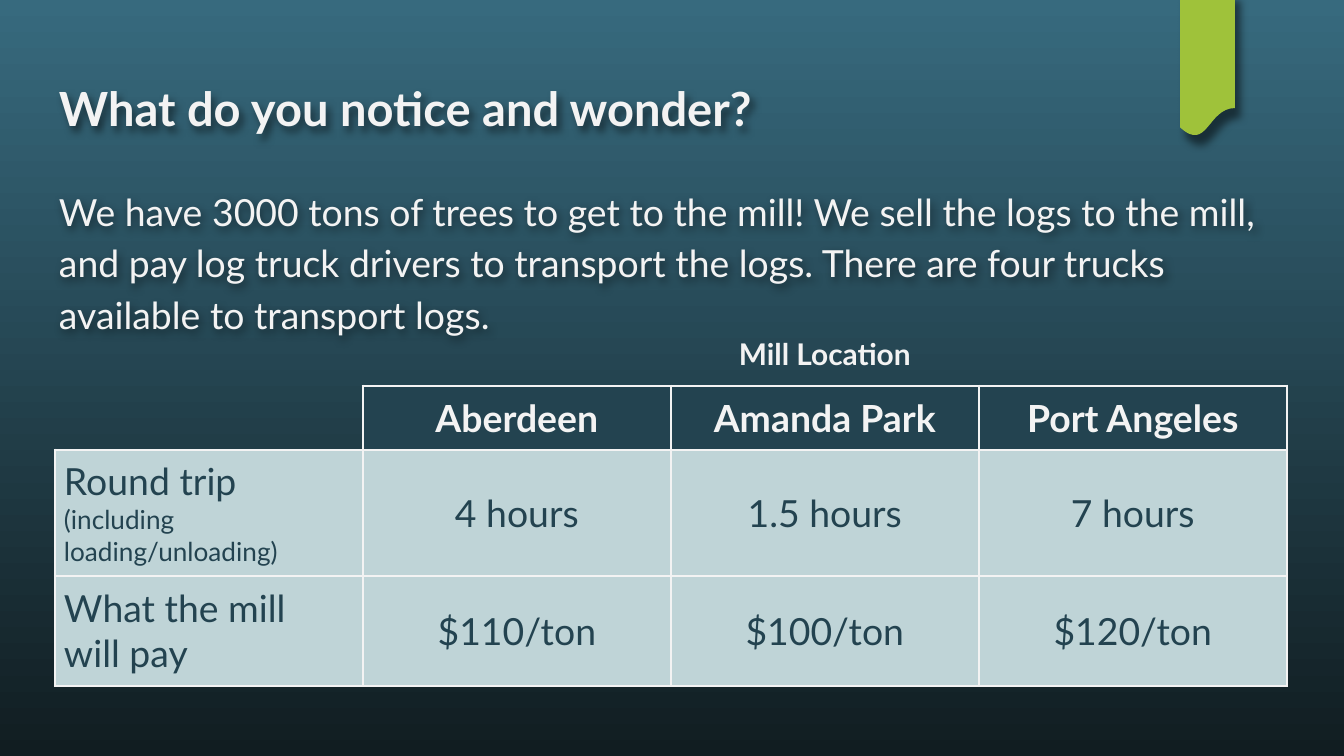
"""Build a slide that sets out a log-hauling problem with a table of mills."""
from lxml import etree
from pptx import Presentation
from pptx import util as u
from pptx.dml.color import RGBColor
from pptx.enum import shapes, text
from pptx.oxml.ns import qn

PX = 914400 / 134.4
FONT = "Lato"
PALE, DARK, MIST, GREEN = "F3F3F3", "234350", "BFD4D7", "9FC23A"
TITLE = "What do you notice and wonder?"
STORY = (
    "We have 3000 tons of trees to get to the mill! We sell the logs to the mill, "
    "and pay log truck drivers to transport the logs. "
    "There are four trucks available to transport logs."
)
MILLS = [
    ["", "Mill Location", "", ""],
    ["", "Aberdeen", "Amanda Park", "Port Angeles"],
    ["Round trip ", "4 hours", "1.5 hours", "7 hours"],
    ["What the mill \vwill pay", "$110/ton", "$100/ton", "$120/ton"],
]
ROW_HEIGHTS = [64, 64, 126, 110]
COLUMN_WIDTH = 308


def px(length):
    """Turn whole pixels into EMU."""
    return u.Emu(round(length * PX))


def colour(code):
    """Turn a hex string into a colour."""
    return RGBColor.from_string(code)


def place(shape, left, top, width, height):
    """Set the position and size of a shape."""
    shape.left, shape.top = px(left), px(top)
    shape.width, shape.height = px(width), px(height)


def style(font, size, code, bold=False):
    """Set the typeface, size, colour and weight of a font."""
    font.name, font.size, font.bold = FONT, u.Pt(size), bold
    font.color.rgb = colour(code)


def add_shadow(shape, distance):
    """Cast a soft, half-transparent shadow below a shape or its text."""
    effects = etree.SubElement(shape._element.spPr, qn("a:effectLst"))
    shadow = etree.SubElement(
        effects, qn("a:outerShdw"), blurRad=str(u.Pt(4.5)), dist=str(u.Pt(distance)),
        dir=str(61 * 60000), algn="bl", rotWithShape="0")
    black = etree.SubElement(shadow, qn("a:srgbClr"), val="000000")
    etree.SubElement(black, qn("a:alpha"), val="50000")


def paint_background(slide):
    """Fill the background with a gradient from top to bottom."""
    fill = slide.background.fill
    fill.gradient()
    fill.gradient_angle = 270
    for stop, position, code in zip(fill.gradient_stops, (0, 1), ("376A7E", "111D21")):
        stop.position = position
        stop.color.rgb = colour(code)


def add_ribbon(slide):
    """Hang the green ribbon from the top edge."""
    ribbon = slide.shapes.add_shape(
        shapes.MSO_SHAPE.FLOWCHART_DOCUMENT, px(1180), px(-9), px(55), px(146))
    ribbon.fill.solid()
    ribbon.fill.fore_color.rgb = colour(GREEN)
    ribbon.line.fill.background()
    add_shadow(ribbon, 6)


def write_block(shape, box, words, size, bold=False, spacing=1.0):
    """Place a left-aligned block of shadowed text."""
    place(shape, *box)
    frame = shape.text_frame
    frame.word_wrap = True
    frame.auto_size = text.MSO_AUTO_SIZE.NONE
    frame.vertical_anchor = text.MSO_ANCHOR.TOP
    frame.margin_left = frame.margin_right = px(13)
    frame.margin_top = frame.margin_bottom = px(13)
    frame.text = words
    paragraph = frame.paragraphs[0]
    paragraph.alignment = text.PP_ALIGN.LEFT
    paragraph.line_spacing = spacing
    style(paragraph.font, size, PALE, bold)
    add_shadow(shape, 3)


def set_borders(cell, edges):
    """Draw the named edges of a cell and clear the others."""
    properties = cell._tc.get_or_add_tcPr()
    for index, edge in enumerate("LRTB"):
        line = etree.Element(qn(f"a:ln{edge}"), w=str(u.Pt(1.5)))
        if edge in edges:
            fill = etree.SubElement(line, qn("a:solidFill"))
            etree.SubElement(fill, qn("a:srgbClr"), val=PALE)
        else:
            etree.SubElement(line, qn("a:noFill"))
        properties.insert(index, line)


def cell_edges(row, column):
    """Name the edges drawn around a cell."""
    if row == 0:
        return "B" if column else ""
    return "RB" if (row, column) == (1, 0) else "LRTB"


def fill_cell(cell, row, column, words):
    """Write and format one table cell."""
    cell.margin_left = cell.margin_right = px(9)
    cell.margin_top = cell.margin_bottom = px(9)
    cell.vertical_anchor = text.MSO_ANCHOR.MIDDLE
    cell.text = words
    paragraph = cell.text_frame.paragraphs[0]
    paragraph.alignment = text.PP_ALIGN.CENTER if column else text.PP_ALIGN.LEFT
    heading = row < 2
    style(paragraph.font, 20 if row else 16, PALE if heading else DARK, heading)
    if row == 0 or (row, column) == (1, 0):
        cell.fill.background()
    else:
        cell.fill.solid()
        cell.fill.fore_color.rgb = colour(DARK if heading else MIST)
    set_borders(cell, cell_edges(row, column))


def add_mill_table(slide):
    """Add the table of trip times and pay at each mill."""
    table = slide.shapes.add_table(
        len(MILLS), len(MILLS[0]), px(55), px(322),
        px(COLUMN_WIDTH * len(MILLS[0])), px(sum(ROW_HEIGHTS))).table
    table.first_row = table.horz_banding = False
    for column in table.columns:
        column.width = px(COLUMN_WIDTH)
    for row, height in enumerate(ROW_HEIGHTS):
        table.rows[row].height = px(height)
        for column, words in enumerate(MILLS[row]):
            fill_cell(table.cell(row, column), row, column, words)
    table.cell(0, 1).merge(table.cell(0, 3))
    trip_note = table.cell(2, 0).text_frame.paragraphs[0].add_run()
    trip_note.text = "(including loading/unloading)"
    trip_note.font.size = u.Pt(14)


def main():
    """Build and save the slide."""
    deck = Presentation()
    deck.slide_width, deck.slide_height = px(1344), px(756)
    slide = deck.slides.add_slide(deck.slide_layouts[5])
    paint_background(slide)
    add_ribbon(slide)
    write_block(slide.shapes.title, (46, 66, 1253, 85), TITLE, 25.2, bold=True)
    story = slide.shapes.add_textbox(0, 0, 0, 0)
    write_block(story, (46, 169, 1253, 503), STORY, 20, spacing=1.15)
    add_mill_table(slide)
    deck.save("out.pptx")


if __name__ == "__main__":
    main()
